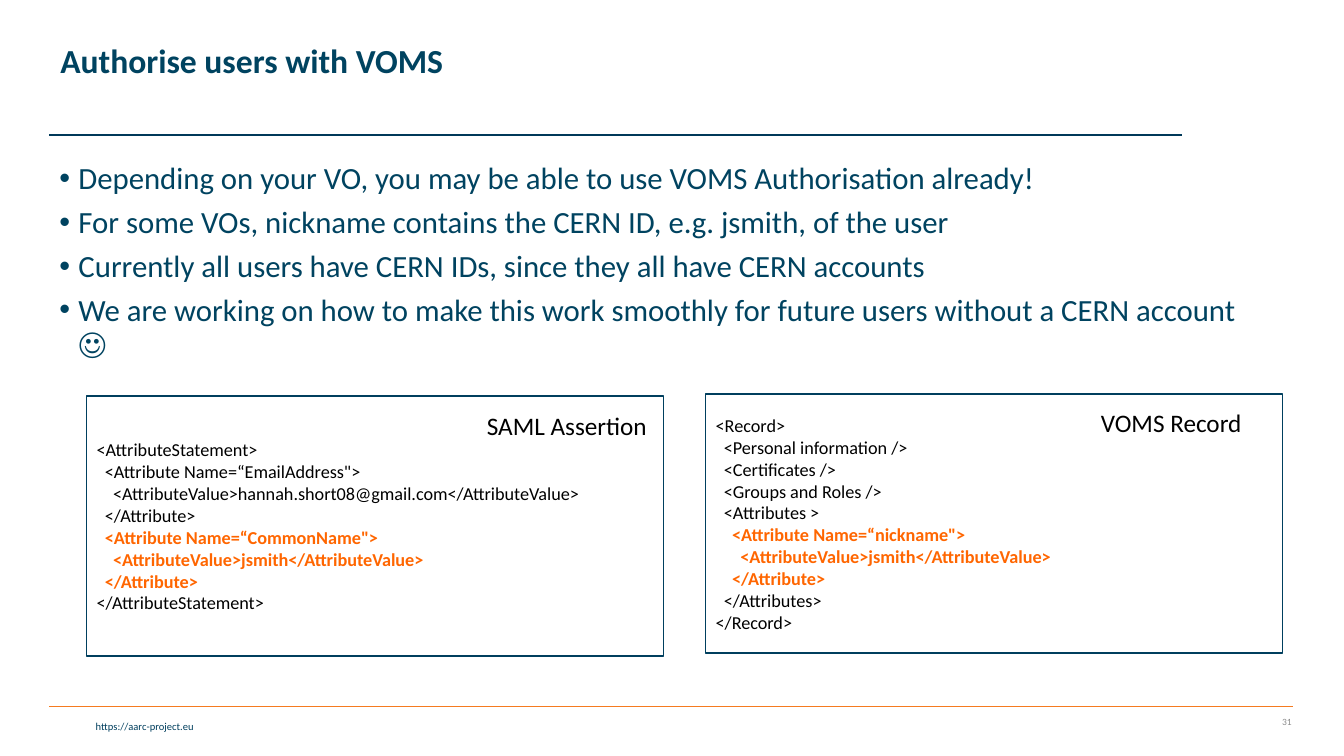
"""Build the slide on authorising users with VOMS."""
from lxml import etree
from pptx import Presentation
from pptx.dml.color import RGBColor
from pptx.enum.shapes import MSO_CONNECTOR, MSO_SHAPE
from pptx.enum.text import MSO_ANCHOR, PP_ALIGN
from pptx.oxml.ns import qn
from pptx.util import Inches, Pt

STRAIGHT = MSO_CONNECTOR.STRAIGHT
RECTANGLE = MSO_SHAPE.RECTANGLE
TOP, MIDDLE = MSO_ANCHOR.TOP, MSO_ANCHOR.MIDDLE
LEFT, RIGHT = PP_ALIGN.LEFT, PP_ALIGN.RIGHT
NAVY = RGBColor(0x00, 0x43, 0x60)
FRAME_NAVY = RGBColor(0x00, 0x3F, 0x5E)
RULE_NAVY = RGBColor(0x00, 0x39, 0x59)
RULE_ORANGE = RGBColor(0xF5, 0x7B, 0x20)
HIGHLIGHT = RGBColor(0xFF, 0x66, 0x00)
GRAY = RGBColor(0x8C, 0x8C, 0x8C)
BLACK = RGBColor(0x00, 0x00, 0x00)
WHITE = RGBColor(0xFF, 0xFF, 0xFF)


def style(paragraph, size, color, bold=False, align=LEFT):
    paragraph.alignment = align
    for run in paragraph.runs:
        run.font.name = "Calibri"
        run.font.size = Pt(size)
        run.font.bold = bold
        run.font.color.rgb = color


def add_label(text, box, size, color, bold=False, align=LEFT, anchor=TOP, wrap=True):
    frame = slide.shapes.add_textbox(*map(Inches, box)).text_frame
    frame.word_wrap = wrap
    frame.vertical_anchor = anchor
    frame.text = text
    for paragraph in frame.paragraphs:
        style(paragraph, size, color, bold, align)
    return frame


prs = Presentation()
prs.slide_width, prs.slide_height = Inches(13.33), Inches(7.5)
slide = prs.slides.add_slide(prs.slide_layouts[6])

for right, y, color in [(12.82, 7.01, RULE_ORANGE), (11.72, 1.34, RULE_NAVY)]:
    rule = slide.shapes.add_connector(STRAIGHT, Inches(0.49), Inches(y), Inches(right), Inches(y))
    rule.line.color.rgb = color
    rule.line.width = Pt(1)
    etree.SubElement(rule._element.spPr, qn("a:effectLst"))

add_label("https://aarc-project.eu", (0.03, 7.09, 1.99, 0.23), 7.5, FRAME_NAVY, align=RIGHT)
add_label("31", (12.1, 7.01, 0.81, 0.3), 6.8, GRAY, align=RIGHT, anchor=MIDDLE)

title = add_label("Authorise users with VOMS", (0.5, 0.08, 10.51, 1.45), 24, NAVY, True, anchor=MIDDLE)
title.margin_bottom = Inches(0.42)
title.paragraphs[0].line_spacing = 0.9

points = [
    "Depending on your VO, you may be able to use VOMS Authorisation already!",
    "For some VOs, nickname contains the CERN ID, e.g. jsmith, of the user",
    "Currently all users have CERN IDs, since they all have CERN accounts",
    "We are working on how to make this work smoothly for future users without a CERN account ☺",
]
body = add_label("\n".join(points), (0.49, 1.57, 11.93, 5.18), 22, NAVY)
for index, point in enumerate(body.paragraphs):
    point.line_spacing = 0.9
    point.space_before = Pt(7.5 if index else 0)
    properties = point._p.get_or_add_pPr()
    properties.set("marL", str(Inches(0.19)))
    properties.set("indent", str(Inches(-0.19)))
    etree.SubElement(properties, qn("a:buFont")).set("typeface", "Arial")
    etree.SubElement(properties, qn("a:buChar")).set("char", "•")

saml_code = """<AttributeStatement>
  <Attribute Name=“EmailAddress">
    <AttributeValue>hannah.short08@gmail.com</AttributeValue>
  </Attribute>
  <Attribute Name=“CommonName">
    <AttributeValue>jsmith</AttributeValue>
  </Attribute>
</AttributeStatement>"""
voms_code = """<Record>
  <Personal information />
  <Certificates />
  <Groups and Roles />
  <Attributes >
    <Attribute Name=“nickname">
      <AttributeValue>jsmith</AttributeValue>
    </Attribute>
  </Attributes>
</Record>"""
panels = [
    (saml_code, range(4, 7), (0.86, 3.93, 5.72, 2.58), "SAML Assertion", (4.73, 4.02, 1.81, 0.4)),
    (voms_code, range(5, 8), (7, 3.91, 5.72, 2.57), "VOMS Record", (10.82, 3.99, 1.62, 0.4)),
]
for code, highlighted, panel_box, heading, heading_box in panels:
    panel = slide.shapes.add_shape(RECTANGLE, *map(Inches, panel_box))
    panel.shadow.inherit = False
    panel.fill.solid()
    panel.fill.fore_color.rgb = WHITE
    panel.line.color.rgb = FRAME_NAVY
    panel.line.width = Pt(1)
    panel.text_frame.word_wrap = True
    panel.text_frame.vertical_anchor = MIDDLE
    panel.text_frame.text = code
    for number, code_line in enumerate(panel.text_frame.paragraphs):
        marked = number in highlighted
        style(code_line, 13, HIGHLIGHT if marked else BLACK, marked)
    add_label(heading, heading_box, 18, BLACK, wrap=False)

prs.save("out.pptx")
